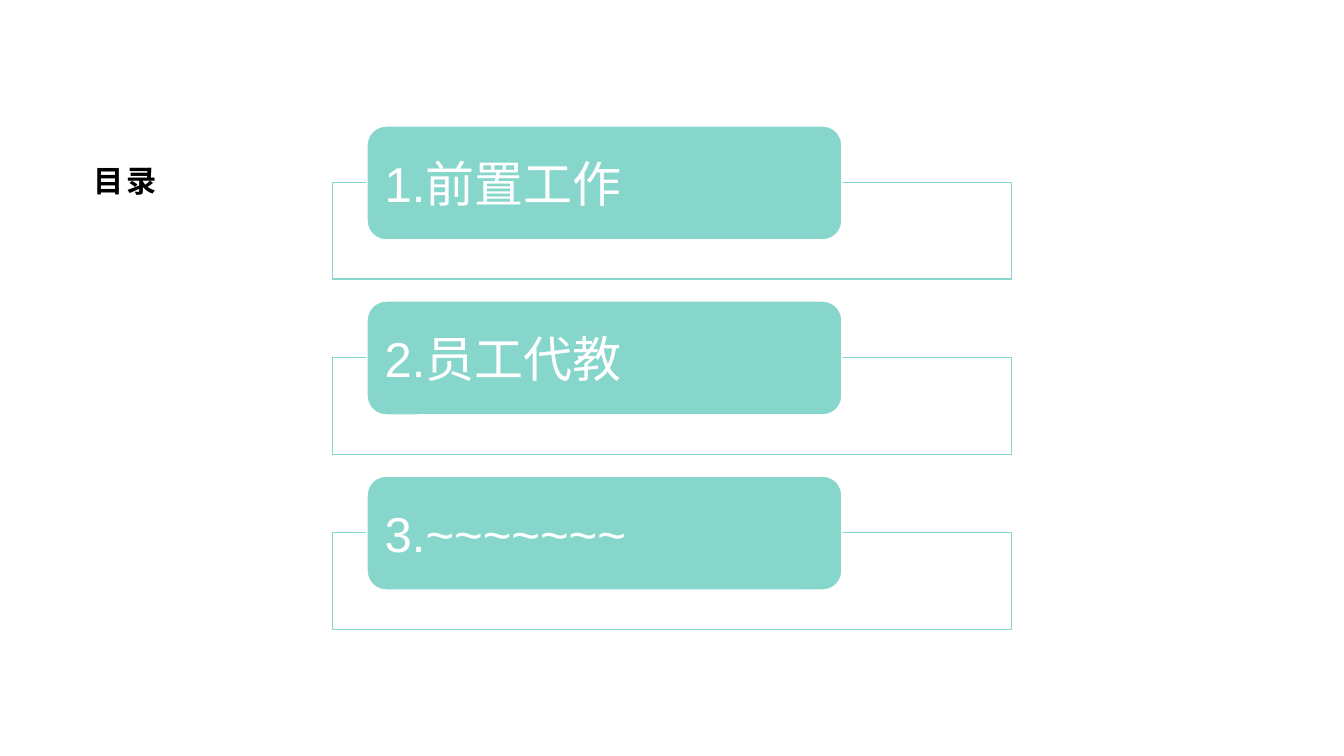
import pptx
import pptx.util
import pptx.dml.color
import pptx.enum.shapes
import pptx.enum.text
import pptx.oxml
import pptx.oxml.ns

Inches = pptx.util.Inches
Pt = pptx.util.Pt
SHAPES = pptx.enum.shapes.MSO_SHAPE
MIDDLE = pptx.enum.text.MSO_ANCHOR.MIDDLE
LEFT = pptx.enum.text.PP_ALIGN.LEFT

TITLE = " 目录"
CHAPTERS = ["1.前置工作", "2.员工代教", "3.~~~~~~~"]
COLORS = {"mint": "87D6CC", "white": "FFFFFF", "black": "000000"}
FRAME_TOP, LABEL_TOP, STEP = 1.81, 1.25, 1.737


def rgb(name):
    return pptx.dml.color.RGBColor.from_string(COLORS[name])


def add_block(page, kind, left, top, width, height, fill, line):
    block = page.shapes.add_shape(
        kind, Inches(left), Inches(top), Inches(width), Inches(height))
    block.shadow.inherit = False
    block.fill.solid()
    block.fill.fore_color.rgb = rgb(fill)
    block.line.color.rgb = rgb(line)
    block.line.width = Pt(1)
    return block


def write(shape, text, size, color, inset):
    frame = shape.text_frame
    frame.word_wrap = True
    frame.vertical_anchor = MIDDLE
    frame.margin_left = frame.margin_right = Inches(inset)
    frame.margin_top = frame.margin_bottom = 0
    para = frame.paragraphs[0]
    para.text = text
    para.alignment = LEFT
    para.font.name = "Arial"
    para.font.size = Pt(size)
    para.font.color.rgb = rgb(color)
    return para


def add_title(page):
    box = page.shapes.add_textbox(Inches(0.73), Inches(1.55), Inches(11.87), Inches(0.48))
    para = write(box, TITLE, 21.6, "black", 0.1)
    para.font.bold = True
    para.runs[0].font._element.set("spc", "200")


def add_chapter(page, index, text):
    offset = index * STEP
    frame = add_block(page, SHAPES.RECTANGLE, 3.3, FRAME_TOP + offset, 6.73, 0.96,
                      "white", "mint")
    tint = frame.fill._xPr.find(".//" + pptx.oxml.ns.qn("a:srgbClr"))
    tint.append(pptx.oxml.parse_xml(
        '<a:alpha xmlns:a="http://schemas.openxmlformats.org/drawingml/2006/main" val="90000"/>'))
    label = add_block(page, SHAPES.ROUNDED_RECTANGLE, 3.64, LABEL_TOP + offset, 4.71, 1.13,
                      "mint", "white")
    write(label, text, 35, "white", 0.12)


def main():
    deck = pptx.Presentation()
    deck.slide_width = Inches(13.33)
    deck.slide_height = Inches(7.5)
    page = deck.slides.add_slide(deck.slide_layouts[6])
    add_title(page)
    for index, text in enumerate(CHAPTERS):
        add_chapter(page, index, text)
    deck.save("out.pptx")


if __name__ == "__main__":
    main()
